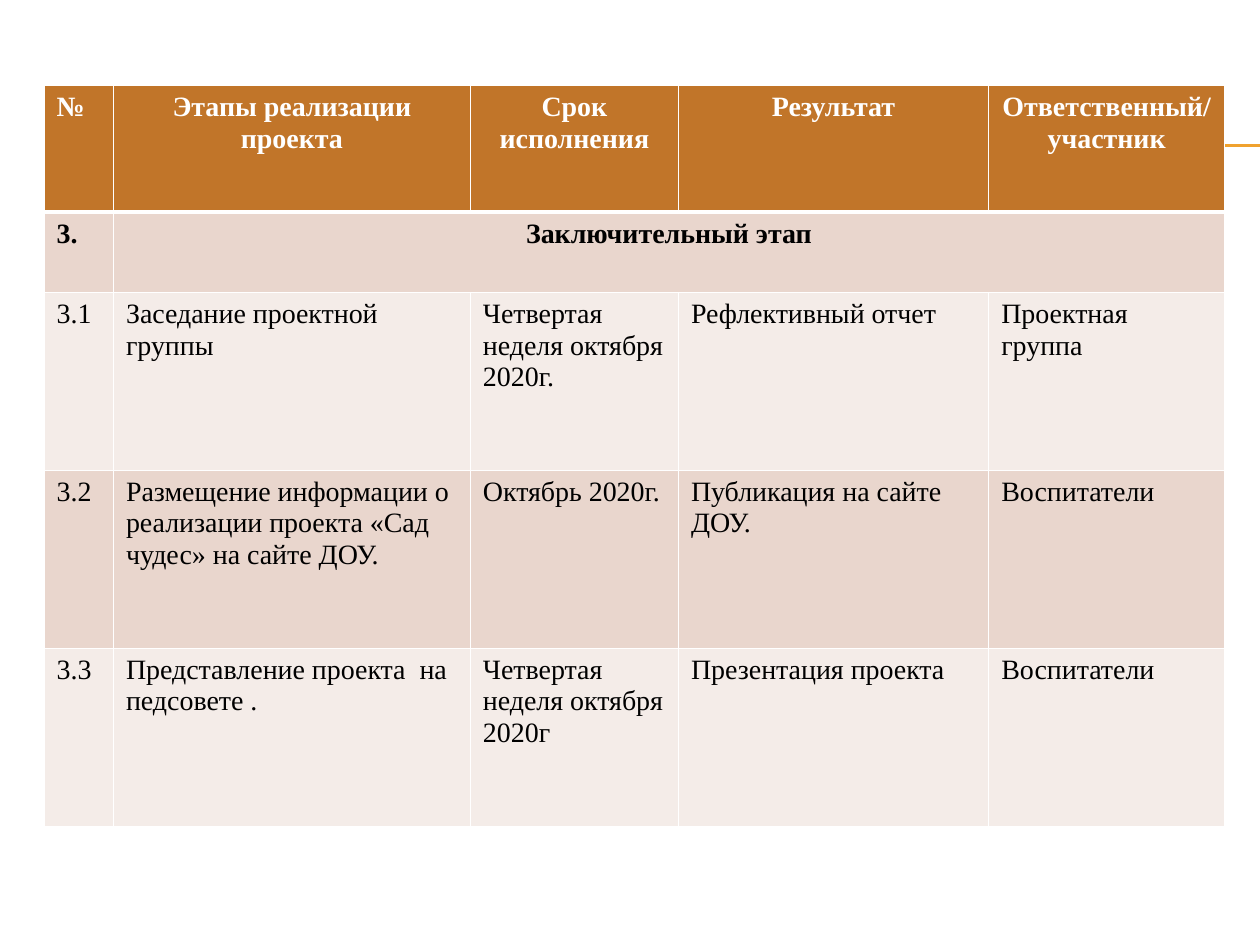
from lxml.etree import SubElement
from pptx import Presentation
from pptx.dml.color import RGBColor
from pptx.enum.shapes import MSO_CONNECTOR
from pptx.enum.text import PP_ALIGN
from pptx.oxml.ns import qn
from pptx.util import Inches, Pt

WHITE = RGBColor(0xFF, 0xFF, 0xFF)
BLACK = RGBColor(0x00, 0x00, 0x00)
GOLD = RGBColor(0xF0, 0xA2, 0x2E)
HEADER = RGBColor(0xC1, 0x75, 0x29)
BAND_DARK = RGBColor(0xE9, 0xD6, 0xCD)
BAND_LIGHT = RGBColor(0xF4, 0xEC, 0xE8)

COL_WIDTHS = [0.55, 2.83, 1.65, 2.46, 1.87]
ROW_HEIGHTS = [1, 0.64, 1.41, 1.41, 1.41]
ROWS = [
    ["№", "Этапы реализации проекта", "Срок исполнения", "Результат",
     "Ответственный/участник"],
    ["3.", "Заключительный этап"],
    ["3.1", "Заседание проектной группы", "Четвертая неделя октября 2020г.",
     "Рефлективный отчет", "Проектная группа"],
    ["3.2", "Размещение информации о реализации проекта «Сад чудес» на сайте ДОУ.",
     "Октябрь 2020г.", "Публикация на сайте ДОУ.", "Воспитатели"],
    ["3.3", "Представление проекта  на педсовете .",
     "Четвертая неделя октября 2020г", "Презентация проекта", "Воспитатели"],
]


def set_borders(cell, widths):
    tcPr = cell._tc.get_or_add_tcPr()
    for side, width in widths.items():
        ln = SubElement(tcPr, qn(f"a:ln{side}"), w=str(Pt(width)))
        fill = SubElement(ln, qn("a:solidFill"))
        SubElement(fill, qn("a:srgbClr"), val=str(WHITE))


def format_cell(cell, row, col):
    set_borders(cell, {"L": 1, "R": 1, "T": 3 if row == 1 else 1,
                       "B": 3 if row == 0 else 1})
    cell.fill.solid()
    band = BAND_DARK if row % 2 else BAND_LIGHT
    cell.fill.fore_color.rgb = HEADER if row == 0 else band


def write_cell(cell, text, row, col):
    p = cell.text_frame.paragraphs[0]
    p.alignment = PP_ALIGN.CENTER if row < 2 and col else PP_ALIGN.LEFT
    r = p.add_run()
    r.text = text
    font = {"name": "Times New Roman", "size": Pt(16), "bold": row < 2}
    for name, value in font.items():
        setattr(r.font, name, value)
    r.font.color.rgb = BLACK if row else WHITE


def add_rules(s, left, top, width):
    for y in (top, top + Inches(0.01)):
        line = s.shapes.add_connector(MSO_CONNECTOR.STRAIGHT, left, y, left + width, y)
        line.line.color.rgb = GOLD
        line.line.width = Pt(0.75)
        SubElement(line._element.spPr, qn("a:effectLst"))


def add_stage_table(s, left, top, width, height):
    table = s.shapes.add_table(len(ROWS), len(COL_WIDTHS), left, top, width, height).table
    for column, share in zip(table.columns, COL_WIDTHS):
        column.width = int(width * share / sum(COL_WIDTHS))
    for row, share in zip(table.rows, ROW_HEIGHTS):
        row.height = int(height * share / sum(ROW_HEIGHTS))
    table.cell(1, 1).merge(table.cell(1, len(COL_WIDTHS) - 1))
    for i, texts in enumerate(ROWS):
        for j in range(len(COL_WIDTHS)):
            format_cell(table.cell(i, j), i, j)
        for j, text in enumerate(texts):
            write_cell(table.cell(i, j), text, i, j)


def main():
    prs = Presentation()
    prs.slide_width, prs.slide_height = Inches(10), Inches(7.5)
    s = prs.slides.add_slide(prs.slide_layouts[6])
    s.background.fill.solid()
    s.background.fill.fore_color.rgb = WHITE
    add_rules(s, Inches(0.56), Inches(1.15), Inches(9.44))
    add_stage_table(s, Inches(0.35), Inches(0.68), Inches(9.37), Inches(5.88))
    prs.save("out.pptx")


if __name__ == "__main__":
    main()
